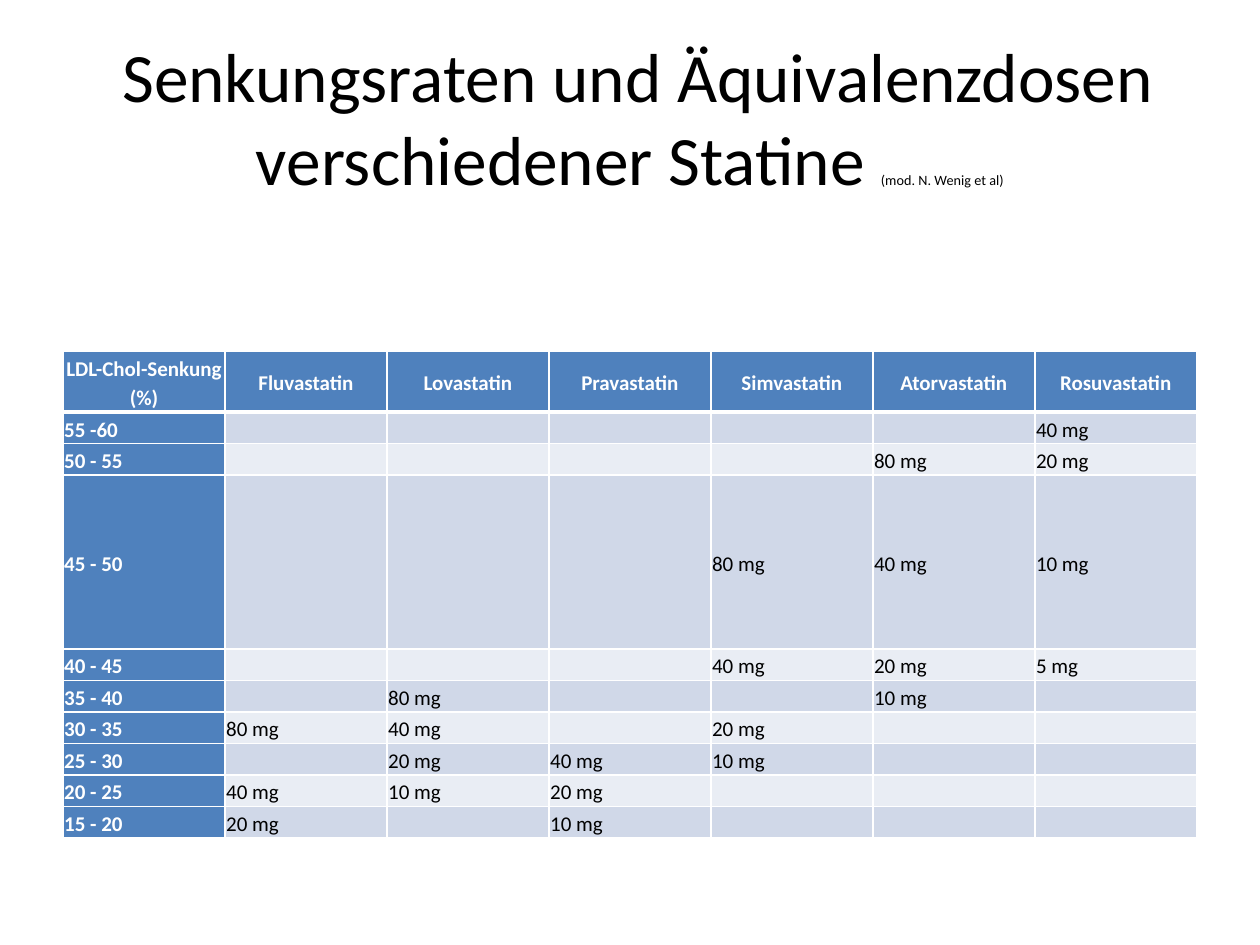
"""Build a slide with a table of LDL reduction rates and equivalent statin doses."""
from lxml.etree import SubElement
from pptx import Presentation
from pptx.dml.color import RGBColor
from pptx.enum.text import MSO_ANCHOR, PP_ALIGN
from pptx.oxml.ns import qn
from pptx.util import Inches, Pt

COLORS = {
    "text": "000000",
    "white": "FFFFFF",
    "header": "4F81BD",
    "dark_band": "D0D8E8",
    "light_band": "E9EDF4",
}
FONT = "Calibri"
TITLE_RUNS = [
    (" Senkungsraten und Äquivalenzdosen verschiedener Statine ", 39.6),
    ("(mod. N. Wenig et al)", 8.1),
]
HEADERS = ["LDL-Chol-Senkung (%)", "Fluvastatin", "Lovastatin", "Pravastatin",
           "Simvastatin", "Atorvastatin", "Rosuvastatin"]
DOSES = [
    ("55 -60", {"Rosuvastatin": 40}),
    ("50 - 55", {"Atorvastatin": 80, "Rosuvastatin": 20}),
    ("45 - 50", {"Simvastatin": 80, "Atorvastatin": 40, "Rosuvastatin": 10}),
    ("40 - 45", {"Simvastatin": 40, "Atorvastatin": 20, "Rosuvastatin": 5}),
    ("35 - 40", {"Lovastatin": 80, "Atorvastatin": 10}),
    ("30 - 35", {"Fluvastatin": 80, "Lovastatin": 40, "Simvastatin": 20}),
    ("25 - 30", {"Lovastatin": 20, "Pravastatin": 40, "Simvastatin": 10}),
    ("20 - 25", {"Fluvastatin": 40, "Lovastatin": 10, "Pravastatin": 20}),
    ("15 - 20", {"Fluvastatin": 20, "Pravastatin": 10}),
]
TABLE_LEFT, TABLE_TOP, TABLE_WIDTH = 0.5, 2.79, 9
HEADER_HEIGHT, ROW_HEIGHT, TALL_HEIGHT = 0.48, 0.25, 1.38
TALL_ROW = "45 - 50"
CELL_SIZE, CELL_INSET = 12, 0.01


def set_all(target, values):
    for name, value in values.items():
        setattr(target, name, value)


def add_run(paragraph, text, size, color, bold=False):
    run = paragraph.add_run()
    run.text = text
    set_all(run.font, {"name": FONT, "size": Pt(size), "bold": bold})
    run.font.color.rgb = RGBColor.from_string(COLORS[color])


def add_borders(cell, widths):
    properties = cell._tc.get_or_add_tcPr()
    for side, width in widths.items():
        line = SubElement(properties, qn(f"a:ln{side}"), w=str(Pt(width)))
        fill = SubElement(line, qn("a:solidFill"))
        SubElement(fill, qn("a:srgbClr"), val=COLORS["white"])


def format_cell(cell, text, row, column):
    is_header = row == 0 or column == 0
    band = "dark_band" if row % 2 else "light_band"
    add_borders(cell, {"L": 1, "R": 1, "T": 3 if row == 1 else 1, "B": 3 if row == 0 else 1})
    cell.fill.solid()
    cell.fill.fore_color.rgb = RGBColor.from_string(COLORS["header" if is_header else band])
    margins = ("margin_left", "margin_top", "margin_right", "margin_bottom")
    set_all(cell, dict.fromkeys(margins, Inches(CELL_INSET)))
    cell.vertical_anchor = MSO_ANCHOR.MIDDLE
    paragraph = cell.text_frame.paragraphs[0]
    set_all(paragraph, {"line_spacing": 1.15,
                        "alignment": PP_ALIGN.LEFT if row else PP_ALIGN.CENTER})
    if text:
        add_run(paragraph, text, CELL_SIZE, "white" if is_header else "text", is_header)
    else:
        SubElement(paragraph._p, qn("a:endParaRPr"), sz=str(CELL_SIZE * 100))


def add_title(slide):
    title = slide.shapes.add_textbox(Inches(0.5), Inches(0.3), Inches(9), Inches(1.25))
    set_all(title.text_frame, {"word_wrap": True, "vertical_anchor": MSO_ANCHOR.MIDDLE})
    paragraph = title.text_frame.paragraphs[0]
    paragraph.alignment = PP_ALIGN.CENTER
    for text, size in TITLE_RUNS:
        add_run(paragraph, text, size, "text")


def add_dose_table(slide):
    rows = [HEADERS]
    heights = [HEADER_HEIGHT]
    for rate, doses in DOSES:
        rows.append([rate] + [f"{doses[name]} mg" if name in doses else "" for name in HEADERS[1:]])
        heights.append(TALL_HEIGHT if rate == TALL_ROW else ROW_HEIGHT)
    table = slide.shapes.add_table(
        len(rows), len(HEADERS), Inches(TABLE_LEFT), Inches(TABLE_TOP),
        Inches(TABLE_WIDTH), Inches(sum(heights))).table
    for row, (texts, height) in enumerate(zip(rows, heights)):
        table.rows[row].height = Inches(height)
        for column, text in enumerate(texts):
            format_cell(table.cell(row, column), text, row, column)


def main():
    presentation = Presentation()
    set_all(presentation, {"slide_width": Inches(10), "slide_height": Inches(7.5)})
    slide = presentation.slides.add_slide(presentation.slide_layouts[6])
    add_title(slide)
    add_dose_table(slide)
    presentation.save("out.pptx")


if __name__ == "__main__":
    main()
